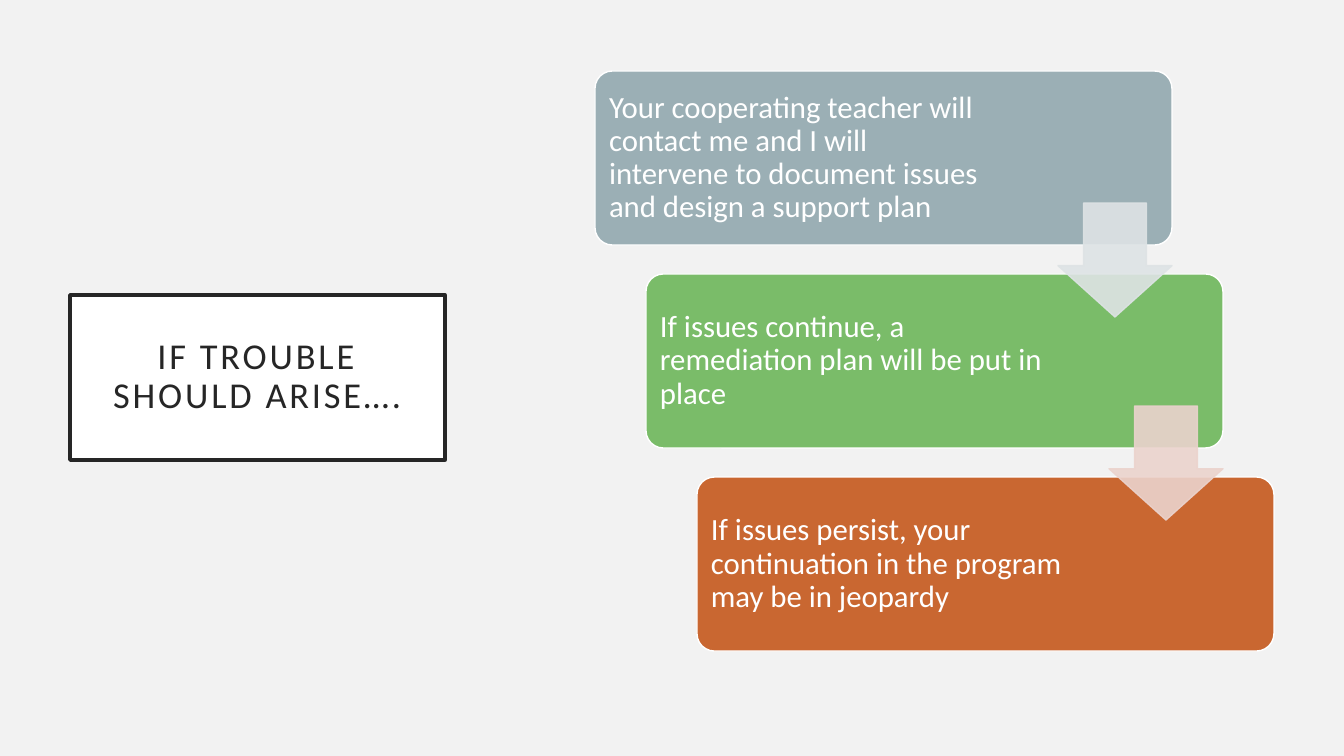
from dataclasses import dataclass

from pptx import Presentation
from pptx.dml.color import RGBColor
from pptx.dml.fill import FillFormat
from pptx.enum.shapes import MSO_SHAPE as Preset
from pptx.enum.text import MSO_ANCHOR as Anchor, MSO_AUTO_SIZE as AutoSize, PP_ALIGN as Align
from pptx.oxml.ns import qn
from pptx.shapes.autoshape import Shape
from pptx.slide import Slide
from pptx.text.text import TextFrame
from pptx.util import Emu, Pt
from lxml.etree import SubElement

EMU_PER_PX = 914400 / 100.8
FONT = "Calibri"
WHITE = RGBColor(0xFF, 0xFF, 0xFF)
INK = RGBColor(0x26, 0x26, 0x26)
PAPER = RGBColor(0xF2, 0xF2, 0xF2)
SLATE = RGBColor(0x9B, 0xAF, 0xB5)
GREEN = RGBColor(0x7A, 0xBC, 0x69)
RUST = RGBColor(0xC9, 0x67, 0x31)
PALE_SLATE = RGBColor(0xDE, 0xE3, 0xE5)
PALE_RUST = RGBColor(0xEB, 0xD3, 0xCD)

STEP_X, STEP_Y = 51, 203
STAGE_LEFT, STAGE_TOP, STAGE_WIDTH, STAGE_HEIGHT = 595, 71, 577, 174
STAGE_PADDING = 5
ARROW_LEFT, ARROW_TOP, ARROW_SIZE = 1058, 203, 114
ARROW_ALPHA = 90


@dataclass
class Stage:
    text: str
    color: RGBColor
    text_width: int


STAGES = [
    Stage("Your cooperating teacher will contact me and I will intervene to "
          "document issues and design a support plan", SLATE, 388),
    Stage("If issues continue, a remediation plan will be put in place", GREEN, 402),
    Stage("If issues persist, your continuation in the program may be in jeopardy", RUST, 402),
]
ARROW_COLORS = [PALE_SLATE, PALE_RUST]


def px(length: int) -> Emu:
    return Emu(round(length * EMU_PER_PX))


def set_text(frame: TextFrame, text: str, size: int, color: RGBColor, inset: int,
             align: Align) -> None:
    frame.text = text
    frame.word_wrap = True
    frame.auto_size = AutoSize.NONE
    frame.vertical_anchor = Anchor.MIDDLE
    frame.margin_left = frame.margin_right = px(inset)
    frame.margin_top = frame.margin_bottom = px(inset)
    para = frame.paragraphs[0]
    para.alignment = align
    para.line_spacing = 0.9
    para.space_before = Pt(0)
    font = para.runs[0].font
    font.name = FONT
    font.size = Pt(size)
    font.color.rgb = color


def set_alpha(fill: FillFormat, color: RGBColor, percent: int) -> None:
    fill.solid()
    fill.fore_color.rgb = color
    for node in fill._xPr.iter(qn("a:srgbClr")):
        if node.find(qn("a:alpha")) is None:
            SubElement(node, qn("a:alpha")).set("val", str(percent * 1000))


def add_preset(page: Slide, preset: Preset, left: int, top: int, width: int, height: int,
               color: RGBColor, line_color: RGBColor, adjustments: list[float]) -> Shape:
    shape = page.shapes.add_shape(preset, px(left), px(top), px(width), px(height))
    shape.shadow.inherit = False
    shape.fill.solid()
    shape.fill.fore_color.rgb = color
    shape.line.color.rgb = line_color
    shape.line.width = Pt(1)
    for index, value in enumerate(adjustments):
        shape.adjustments[index] = value
    return shape


def add_title(page: Slide) -> None:
    title = page.shapes.title
    title.left, title.top, title.width, title.height = px(70), px(295), px(375), px(165)
    title.fill.solid()
    title.fill.fore_color.rgb = WHITE
    title.line.color.rgb = INK
    title.line.width = Pt(2.5)
    set_text(title.text_frame, "IF TROUBLE SHOULD ARISE….", 26, INK, 20, Align.CENTER)
    title.text_frame.paragraphs[0].runs[0].font._element.set("spc", "200")


def add_stage(page: Slide, index: int, stage: Stage) -> None:
    left, top = STAGE_LEFT + index * STEP_X, STAGE_TOP + index * STEP_Y
    add_preset(page, Preset.ROUNDED_RECTANGLE, left, top, STAGE_WIDTH, STAGE_HEIGHT,
               stage.color, WHITE, [0.1])
    box = page.shapes.add_textbox(px(left + STAGE_PADDING), px(top + STAGE_PADDING),
                                  px(stage.text_width), px(STAGE_HEIGHT - 2 * STAGE_PADDING))
    set_text(box.text_frame, stage.text, 22, WHITE, 9, Align.LEFT)


def add_arrow(page: Slide, index: int, color: RGBColor) -> None:
    arrow = add_preset(page, Preset.DOWN_ARROW, ARROW_LEFT + index * STEP_X,
                       ARROW_TOP + index * STEP_Y, ARROW_SIZE, ARROW_SIZE,
                       color, color, [0.55, 0.45])
    set_alpha(arrow.fill, color, ARROW_ALPHA)
    set_alpha(arrow.line.fill, color, ARROW_ALPHA)


def main() -> None:
    deck = Presentation()
    deck.slide_width, deck.slide_height = px(1344), px(756)
    page = deck.slides.add_slide(deck.slide_layouts.get_by_name("Title Only"))
    page.background.fill.solid()
    page.background.fill.fore_color.rgb = PAPER
    add_title(page)
    for index, stage in enumerate(STAGES):
        add_stage(page, index, stage)
    for index, color in enumerate(ARROW_COLORS):
        add_arrow(page, index, color)
    deck.save("out.pptx")


if __name__ == "__main__":
    main()
